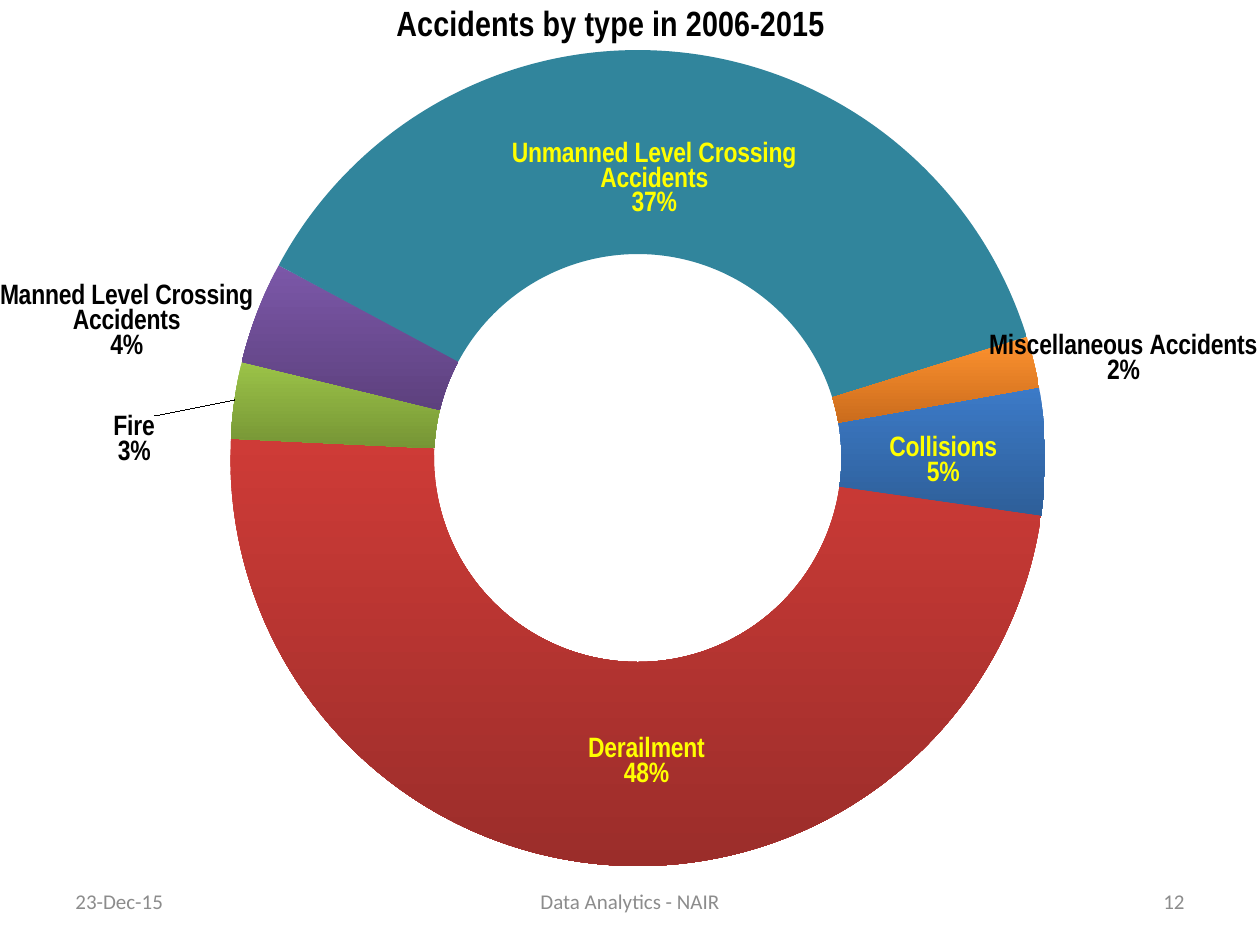
from lxml.etree import SubElement
from pptx import Presentation
from pptx.chart.data import CategoryChartData
from pptx.dml.color import RGBColor
from pptx.enum.chart import XL_CHART_TYPE
from pptx.enum.text import MSO_ANCHOR, PP_ALIGN
from pptx.oxml.ns import qn
from pptx.util import Pt

COLOURS = {
    "title": "000000", "outside": "000000", "inside": "FFFF00", "footer": "8C8C8C",
    "blue": ("3C7AC7", "2E5F99"), "red": ("CE3B37", "9B2D2A"),
    "green": ("9BC348", "769535"), "purple": ("7B57A8", "5D417E"),
    "teal": ("31859C", "31859C"), "orange": ("FF932F", "CB6C1D"),
}

# Type, percentage, fill, label colour, label shift as a fraction of the chart
ACCIDENTS = [
    ("Collisions", 5, "blue", "inside", (0, 0.01)),
    ("Derailment", 48, "red", "inside", (0.03, 0)),
    ("Fire", 3, "green", "outside", (-0.16, 0.03)),
    ("Manned Level Crossing Accidents", 4, "purple", "outside", (-0.18, -0.03)),
    ("Unmanned Level Crossing Accidents", 37, "teal", "inside", (-0.01, 0.03)),
    ("Miscellaneous Accidents", 2, "orange", "outside", (0.15, -0.03)),
]

FOOTERS = [
    ("23-Dec-15", 36, 168, PP_ALIGN.LEFT),
    ("Data Analytics - NAIR", 246, 228, PP_ALIGN.CENTER),
    ("12", 516, 168, PP_ALIGN.RIGHT),
]


def rgb(name):
    return RGBColor.from_string(COLOURS[name])


def set_layout(parent, index, **values):
    """Give a chart part a manual layout, placed at the child index the schema asks for."""
    for old in parent.findall(qn("c:layout")):
        parent.remove(old)
    layout = SubElement(parent, qn("c:layout"))
    parent.insert(index, layout)
    manual = SubElement(layout, qn("c:manualLayout"))
    for key, value in values.items():
        SubElement(manual, qn(f"c:{key}")).set("val", str(value))


class SlideBuilder:
    def __init__(self, page):
        self.page = page
        self.chart_font = "Arial Narrow"
        self.footer_font = "Calibri"

    def style(self, font, name, size, colour, bold=False):
        font.name, font.size, font.bold = name, Pt(size), bold
        font.color.rgb = rgb(colour)

    def text(self, words, left, top, width, height, align):
        box = self.page.shapes.add_textbox(Pt(left), Pt(top), Pt(width), Pt(height))
        frame = box.text_frame
        frame.word_wrap = True
        frame.vertical_anchor = MSO_ANCHOR.MIDDLE
        para = frame.paragraphs[0]
        para.alignment = align
        span = para.add_run()
        span.text = words
        self.style(span.font, self.footer_font, 12, "footer")

    def doughnut(self, title, rows, left, top, width, height):
        data = CategoryChartData()
        data.categories = [row[0] for row in rows]
        data.add_series("Series 1", [row[1] for row in rows])
        chart = self.page.shapes.add_chart(
            XL_CHART_TYPE.DOUGHNUT, Pt(left), Pt(top), Pt(width), Pt(height), data).chart
        chart.has_legend = False
        self.style(chart.font, self.chart_font, 12, "title")
        self.chart_title(chart, title)

        plot = chart.plots[0]
        plot.vary_by_categories = True
        space = chart.element
        space.find(f".//{qn('c:firstSliceAng')}").set("val", "80")
        space.find(f".//{qn('c:holeSize')}").set("val", "50")
        set_layout(space.find(f".//{qn('c:plotArea')}"), 0, layoutTarget="inner",
                   xMode="edge", yMode="edge", x=0.158, y=0.057, w=0.698, h=0.928)

        series = plot.series[0]
        labels = series.data_labels
        labels.show_value = False
        labels.show_category_name = labels.show_percentage = True
        self.style(labels.font, self.chart_font, 16, "outside", bold=True)
        for index, (_, _, fill, label, shift) in enumerate(rows):
            self.slice(series.points[index], fill, label)
            self.label(space.findall(f".//{qn('c:dLbl')}")[index], shift)

    def chart_title(self, chart, words):
        chart.has_title = True
        span = chart.chart_title.text_frame.paragraphs[0].add_run()
        span.text = words
        self.style(span.font, self.chart_font, 20, "title", bold=True)
        set_layout(chart.chart_title._element, 1, xMode="edge", yMode="edge", x=0.31, y=0)

    def slice(self, point, fill, label):
        paint = point.format.fill
        paint.gradient()
        paint.gradient_angle = 270
        for stop, colour in zip(paint.gradient_stops, COLOURS[fill]):
            stop.color.rgb = RGBColor.from_string(colour)
        point.format.line.fill.background()
        self.style(point.data_label.font, self.chart_font, 16, label, bold=True)

    def label(self, element, shift):
        """Show category and percentage on separate lines, moved by the given shift."""
        set_layout(element, 1, x=shift[0], y=shift[1])
        for tag, shown in (("showVal", 0), ("showCatName", 1), ("showPercent", 1)):
            element.find(qn(f"c:{tag}")).set("val", str(shown))
        SubElement(element, qn("c:separator")).text = "\n"


def main():
    deck = Presentation()
    deck.slide_width, deck.slide_height = Pt(720), Pt(540)
    builder = SlideBuilder(deck.slides.add_slide(deck.slide_layouts[6]))
    builder.doughnut("Accidents by type in 2006-2015", ACCIDENTS, 0, 0, 720, 502.5)
    for words, left, width, align in FOOTERS:
        builder.text(words, left, 500.5, width, 28.75, align)
    deck.save("out.pptx")


if __name__ == "__main__":
    main()
